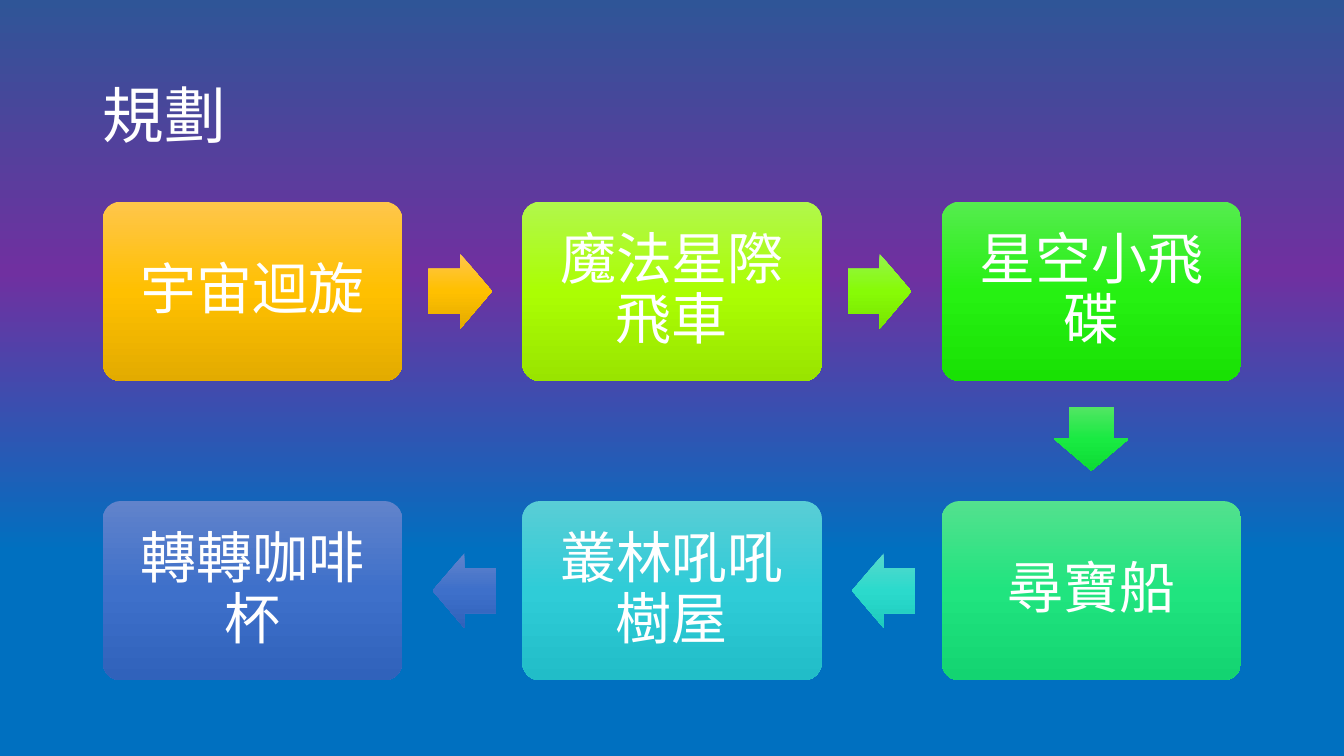
from copy import deepcopy

from pptx import Presentation
from pptx.dml.color import RGBColor
from pptx.enum.shapes import MSO_SHAPE
from pptx.enum.text import MSO_ANCHOR, PP_ALIGN
from pptx.util import Inches, Pt

ROUNDED = MSO_SHAPE.ROUNDED_RECTANGLE
ARROW = MSO_SHAPE.RIGHT_ARROW
MIDDLE = MSO_ANCHOR.MIDDLE
LEFT, CENTER = PP_ALIGN.LEFT, PP_ALIGN.CENTER

TITLE_ONLY = 5
DOWNWARD, UPWARD = 270, 90
BACKGROUND = [(0.27, "0070C0"), (0.64, "7030A0"), (1, "2F5597")]

STEPS = [
    ("宇宙迴旋", 0, 0, ("FFC64B", "FFC000", "E3AB00")),
    ("魔法星際飛車", 1, 0, ("B1F74C", "ABFE03", "99E400")),
    ("星空小飛碟", 2, 0, ("55EC4E", "26F112", "19E104")),
    ("尋寶船", 2, 1, ("53E18E", "20E47F", "13D471")),
    ("叢林吼吼樹屋", 1, 1, ("59CDD6", "2FCCD7", "21BDC8")),
    ("轉轉咖啡杯", 0, 1, ("6183CB", "3E70CA", "3062BB")),
]
ARROWS = [
    (0, 0, 0, ("FFC64B", "FFC000", "E3AB00")),
    (1, 0, 0, ("94F44C", "87FB06", "78E500")),
    (2, 0, 90, ("51E663", "19EA42", "0CDB34")),
    (2, 1, 180, ("58D8CC", "2BDACC", "1ECBBD")),
    (1, 1, 180, ("6183CB", "3E70CA", "3062BB")),
]


def color(value):
    return RGBColor.from_string(value)


class FlowSlide:
    white = "FFFFFF"
    box_font, title_font = "Calibri", "Noto Sans CJK JP"
    left, top = 1.02, 2
    column, row = 4.16, 2.97
    box_width, box_height = 2.97, 1.78
    arrow_length, arrow_height = 0.63, 0.74
    gap, inset = 0.26, 0.17

    def __init__(self, presentation):
        layout = presentation.slide_layouts[TITLE_ONLY]
        self.slide = presentation.slides.add_slide(layout)

    def paint(self, fill, element, stops, angle):
        fill.gradient()
        fill.gradient_angle = angle
        gradient = element.xpath(".//a:gradFill")[0]
        gradient.set("rotWithShape", "0")
        stop_list = gradient.xpath("./a:gsLst")[0]
        stop_list.append(deepcopy(stop_list[0]))
        for stop, (position, value) in zip(fill.gradient_stops, stops):
            stop.position = position
            stop.color.rgb = color(value)

    def background(self, stops):
        fill = self.slide.background.fill
        self.paint(fill, self.slide.element, stops, UPWARD)

    def set_text(self, frame, text, font, size, alignment):
        frame.word_wrap = True
        frame.vertical_anchor = MIDDLE
        paragraph = frame.paragraphs[0]
        paragraph.text = text
        paragraph.alignment = alignment
        paragraph.line_spacing = 0.9
        paragraph.font.name = font
        paragraph.font.size = Pt(size)
        paragraph.font.color.rgb = color(self.white)

    def title(self, text):
        title = self.slide.shapes.title
        title.left, title.top = Inches(0.92), Inches(0.45)
        title.width, title.height = Inches(11.5), Inches(1.45)
        self.set_text(title.text_frame, text, self.title_font, 44, LEFT)

    def center(self, column, row):
        return (self.left + column * self.column + self.box_width / 2,
                self.top + row * self.row + self.box_height / 2)

    def shape(self, kind, x, y, width, height, colors):
        shape = self.slide.shapes.add_shape(
            kind, Inches(x - width / 2), Inches(y - height / 2),
            Inches(width), Inches(height))
        shape.shadow.inherit = False
        shape.line.fill.background()
        stops = zip((0, 0.5, 1), colors)
        self.paint(shape.fill, shape.element, stops, DOWNWARD)
        return shape

    def step(self, text, column, row, colors):
        x, y = self.center(column, row)
        box = self.shape(ROUNDED, x, y, self.box_width, self.box_height, colors)
        box.adjustments[0] = 0.1
        frame = box.text_frame
        frame.margin_left = frame.margin_right = Inches(self.inset)
        frame.margin_top = frame.margin_bottom = Inches(self.inset)
        self.set_text(frame, text, self.box_font, 40, CENTER)

    def arrow(self, column, row, rotation, colors):
        x, y = self.center(column, row)
        reach = self.gap + self.arrow_length / 2
        if rotation == 90:
            y += self.box_height / 2 + reach
        else:
            direction = 1 if rotation == 0 else -1
            x += direction * (self.box_width / 2 + reach)
        arrow = self.shape(ARROW, x, y, self.arrow_length,
                           self.arrow_height, colors)
        arrow.adjustments[0] = 0.6
        arrow.adjustments[1] = 0.5
        arrow.rotation = rotation


def main():
    presentation = Presentation()
    presentation.slide_width = Inches(13.33)
    presentation.slide_height = Inches(7.5)
    flow = FlowSlide(presentation)
    flow.background(BACKGROUND)
    flow.title("規劃")
    for step in STEPS:
        flow.step(*step)
    for arrow in ARROWS:
        flow.arrow(*arrow)
    presentation.save("out.pptx")


if __name__ == "__main__":
    main()
